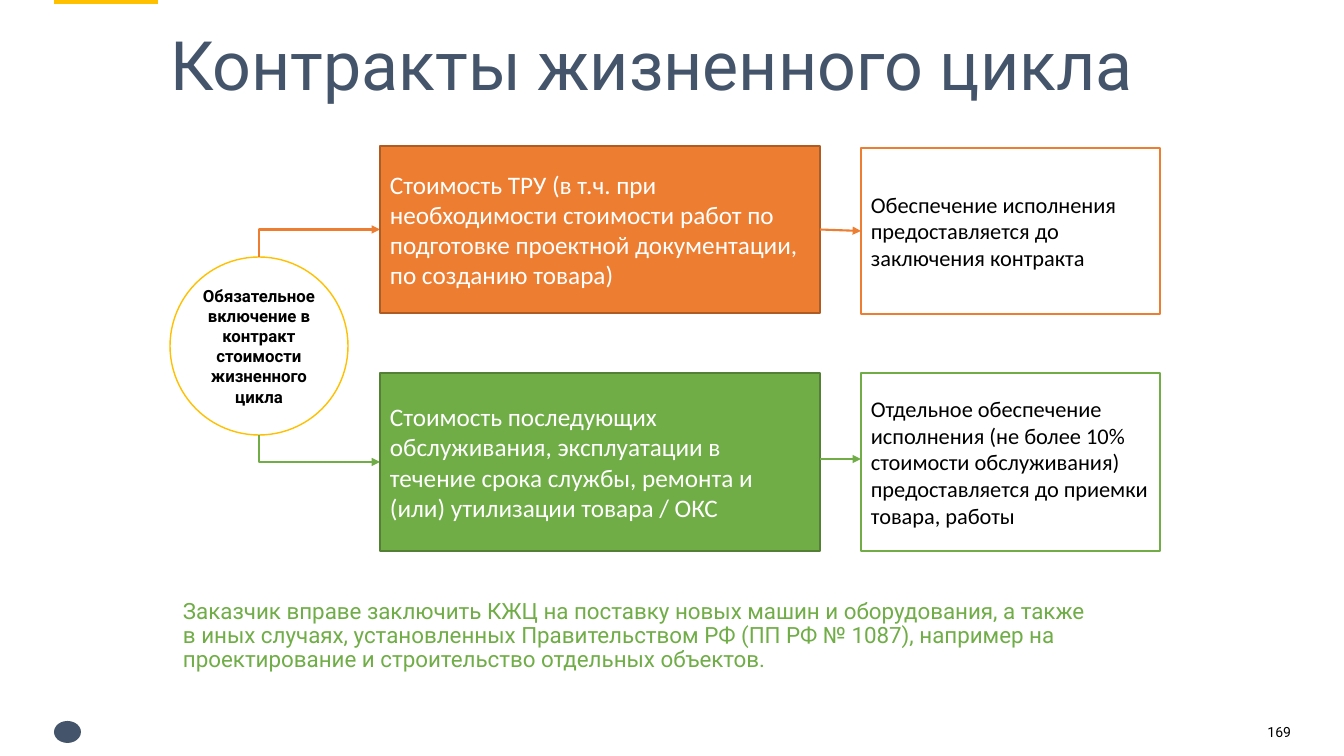
"""Builds the slide on life-cycle contracts."""
from lxml.etree import SubElement
from pptx import Presentation
from pptx.dml.color import RGBColor
from pptx.enum.shapes import MSO_CONNECTOR, MSO_SHAPE
from pptx.enum.text import MSO_ANCHOR, MSO_AUTO_SIZE, PP_ALIGN
from pptx.oxml.ns import qn
from pptx.util import Emu, Pt

PX = 914400 / 100.8
COLORS = {
    "navy": "44546A", "gold": "FFC000", "white": "FFFFFF", "black": "000000",
    "orange": "ED7D31", "rust": "AF5C24", "green": "70AD47", "forest": "538035",
}
TITLE = "Контракты жизненного цикла"
HUB = "Обязательное включение в контракт стоимости жизненного цикла"
NOTE = ("Заказчик вправе заключить КЖЦ на поставку новых машин и оборудования, "
        "а также в иных случаях, установленных Правительством РФ (ПП РФ № 1087), "
        "например на проектирование и строительство отдельных объектов.")
NUMBER = "169"
ROWS = [
    {"color": "orange", "edge": "rust", "cost_y": (146, 167), "security_y": (148, 166),
     "arrow_y": None,
     "cost": "Стоимость ТРУ (в т.ч. при необходимости стоимости работ по подготовке "
             "проектной документации, по созданию товара)",
     "security": "Обеспечение исполнения\nпредоставляется до заключения контракта"},
    {"color": "green", "edge": "forest", "cost_y": (373, 178), "security_y": (373, 178),
     "arrow_y": 459,
     "cost": "Стоимость последующих обслуживания, эксплуатации в течение срока службы, "
             "ремонта и (или) утилизации товара / ОКС",
     "security": "Отдельное обеспечение исполнения (не более 10% стоимости обслуживания) "
                 "предоставляется до приемки товара, работы"},
]
HUB_BOX = (170, 257, 178, 178)
COST_X, COST_W = 380, 440
SECURITY_X, SECURITY_W = 861, 299


def px(*values):
    return [Emu(round(v * PX)) for v in values]


def rgb(name):
    return RGBColor.from_string(COLORS[name])


def write(sp, text, size, color, font, bold=False, align=PP_ALIGN.LEFT,
          anchor=MSO_ANCHOR.MIDDLE, spacing=None, inset=True):
    tf = sp.text_frame
    tf.text = text
    tf.word_wrap = True
    tf.auto_size = MSO_AUTO_SIZE.NONE
    tf.vertical_anchor = anchor
    if not inset:
        tf.margin_left = tf.margin_top = tf.margin_right = tf.margin_bottom = 0
    for p in tf.paragraphs:
        p.alignment = align
        p.space_before = Pt(0)
        if spacing:
            p.line_spacing = spacing
        for r in p.runs:
            r.font.size = Pt(size)
            r.font.name = font
            r.font.bold = bold
            r.font.color.rgb = rgb(color)


def add_block(s, kind, box, fill, line=None):
    sp = s.shapes.add_shape(kind, *px(*box))
    sp.shadow.inherit = False
    sp.fill.solid()
    sp.fill.fore_color.rgb = rgb(fill)
    if line:
        sp.line.color.rgb = rgb(line)
        sp.line.width = Pt(1)
    else:
        sp.line.fill.background()
    return sp


def add_arrow(s, kind, start, end, color):
    c = s.shapes.add_connector(kind, *px(*start, *end))
    c.line.color.rgb = rgb(color)
    c.line.width = Pt(1.5)
    SubElement(c.line._get_or_add_ln(), qn("a:tailEnd"), type="triangle")
    SubElement(c._element.spPr, qn("a:effectLst"))
    return c


def add_corner_arrow(s, start, end, color):
    (x1, y1), (x2, y2) = start, end
    cx, cy = (x1 + x2) / 2, (y1 + y2) / 2
    half_w, half_h = abs(y2 - y1) / 2, (x2 - x1) / 2
    upward = y2 < y1
    side = half_h if upward else -half_h
    c = add_arrow(s, MSO_CONNECTOR.ELBOW, (cx + half_w, cy + side),
                  (cx - half_w, cy - side), color)
    spPr = c._element.spPr
    spPr.find(qn("a:xfrm")).set("rot", str((90 if upward else 270) * 60000))
    spPr.find(qn("a:prstGeom")).set("prst", "bentConnector2")


def main():
    prs = Presentation()
    prs.slide_width, prs.slide_height = px(1344, 756)
    s = prs.slides.add_slide(prs.slide_layouts[5])

    add_block(s, MSO_SHAPE.RECTANGLE, (54, 0, 104, 4), "gold")
    add_block(s, MSO_SHAPE.OVAL, (54, 721, 27, 22), "navy")

    title = s.shapes.title
    title.left, title.top, title.width, title.height = px(170, 35, 1005, 72)
    write(title, TITLE, 48.6, "navy", "Roboto", spacing=0.8, inset=False)

    hub = add_block(s, MSO_SHAPE.OVAL, HUB_BOX, "white", "gold")
    write(hub, HUB, 12, "black", "Roboto", bold=True, align=PP_ALIGN.CENTER, inset=False)
    hub_x, hub_y, hub_w, hub_h = HUB_BOX

    for row in ROWS:
        top, height = row["cost_y"]
        middle = top + height / 2
        color = row["color"]
        hub_edge = hub_y if middle < hub_y else hub_y + hub_h
        add_corner_arrow(s, (hub_x + hub_w / 2, hub_edge), (COST_X, middle), color)

        cost = add_block(s, MSO_SHAPE.RECTANGLE, (COST_X, top, COST_W, height),
                         color, row["edge"])
        write(cost, row["cost"], 18, "white", "Calibri")
        top, height = row["security_y"]
        security = add_block(s, MSO_SHAPE.RECTANGLE,
                             (SECURITY_X, top, SECURITY_W, height), "white", color)
        write(security, row["security"], 16, "black", "Calibri")

        y = row["arrow_y"] or middle
        arrow = add_arrow(s, MSO_CONNECTOR.STRAIGHT, (COST_X + COST_W, y),
                          (SECURITY_X, y), color)
        if row["arrow_y"] is None:
            arrow.begin_connect(cost, 3)
            arrow.end_connect(security, 1)

    note = s.shapes.add_textbox(*px(183, 600, 909, 72))
    write(note, NOTE, 16, "green", "Roboto", anchor=MSO_ANCHOR.TOP, spacing=0.9, inset=False)
    number = s.shapes.add_textbox(*px(1104, 725, 187, 31))
    write(number, NUMBER, 10, "black", "Roboto", align=PP_ALIGN.RIGHT,
          anchor=MSO_ANCHOR.TOP, spacing=0.9, inset=False)

    prs.save("out.pptx")


if __name__ == "__main__":
    main()
